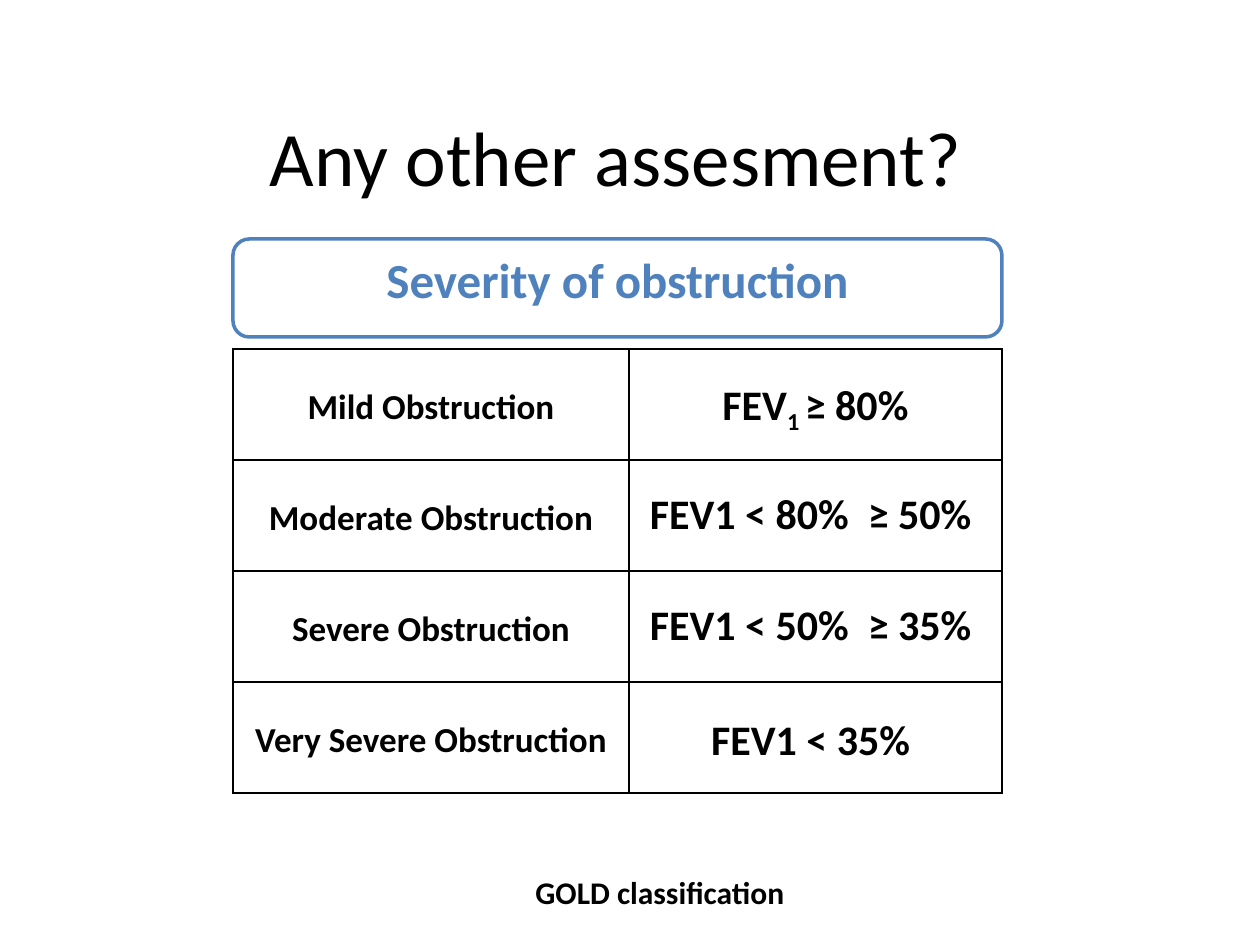
from pptx import Presentation
from pptx.dml.color import RGBColor
from pptx.enum.shapes import MSO_SHAPE as Shape
from pptx.enum.text import MSO_ANCHOR as Anchor, MSO_AUTO_SIZE as AutoSize, PP_ALIGN as Align
from pptx.oxml.ns import qn
from pptx.util import Pt
from lxml.etree import SubElement

TITLE = "Any other assesment?"
HEADING = "Severity of obstruction"
SOURCE = "GOLD classification"
GRADES = [
    ("Mild Obstruction", ["FEV", "1 ", "≥ 80%"], 1.15),
    ("Moderate Obstruction", ["FEV1 < 80%  ≥ 50% "], 1.0),
    ("Severe Obstruction", ["FEV1 < 50%  ≥ 35% "], 1.0),
    ("Very Severe Obstruction", ["FEV1 < 35% "], 1.15),
]
SUBSCRIPT = "1 "
FONT, BLACK, WHITE, BLUE = "Calibri", "000000", "FFFFFF", "4F81BD"
LEFT, GRID_TOP, ROW_HEIGHT = 233, 349, 111
COLUMNS = [396, 373]
WIDTH = sum(COLUMNS)


def px(n):
    return round(n * 914400 / 126)


def box(*lengths):
    return [px(n) for n in lengths]


def rgb(hex_colour):
    return RGBColor.from_string(hex_colour)


def write(frame, runs, size, colour=BLACK, bold=True, spacing=1.0):
    paragraph = frame.paragraphs[0]
    paragraph.alignment = Align.CENTER
    paragraph.line_spacing = spacing
    for text in runs:
        run = paragraph.add_run()
        run.text = text
        font = run.font
        font.name, font.size, font.bold = FONT, Pt(size), bold
        font.color.rgb = rgb(colour)
        if text == SUBSCRIPT:
            font._element.set("baseline", "-25000")


def add_borders(cell):
    properties = cell._tc.get_or_add_tcPr()
    for position, side in enumerate(("a:lnL", "a:lnR", "a:lnT", "a:lnB")):
        border = properties.makeelement(qn(side), {"w": str(Pt(1))})
        fill = SubElement(border, qn("a:solidFill"))
        SubElement(fill, qn("a:srgbClr"), val=BLACK)
        properties.insert(position, border)


def add_grades(slide):
    table = slide.shapes.add_table(
        len(GRADES), len(COLUMNS),
        *box(LEFT, GRID_TOP, WIDTH, ROW_HEIGHT * len(GRADES))).table
    table.first_row = table.horz_banding = False
    for column, width in zip(table.columns, COLUMNS):
        column.width = px(width)
    for row, (grade, limits, spacing) in enumerate(GRADES):
        table.rows[row].height = px(ROW_HEIGHT)
        contents = [([grade], 20, 1.15), (limits, 24, spacing)]
        for col, (runs, size, line_spacing) in enumerate(contents):
            cell = table.cell(row, col)
            cell.fill.background()
            cell.vertical_anchor = Anchor.MIDDLE
            cell.margin_left = cell.margin_right = px(9)
            cell.margin_top = cell.margin_bottom = 0
            write(cell.text_frame, runs, size, spacing=line_spacing)
            add_borders(cell)


def main():
    deck = Presentation()
    deck.slide_width, deck.slide_height = box(1260, 945)
    slide = deck.slides.add_slide(deck.slide_layouts[5])

    title = slide.shapes.title
    title.left, title.top, title.width, title.height = box(115, 83, 1002, 145)
    title.text_frame.vertical_anchor = Anchor.MIDDLE
    write(title.text_frame, [TITLE], 44, bold=False)

    add_grades(slide)

    source = slide.shapes.add_textbox(*box(501, 867, 318, 50)).text_frame
    source.word_wrap = True
    source.auto_size = AutoSize.SHAPE_TO_FIT_TEXT
    write(source, [SOURCE], 18)

    heading = slide.shapes.add_shape(Shape.ROUNDED_RECTANGLE, *box(LEFT, 239, WIDTH, 98))
    heading.shadow.inherit = False
    heading.fill.solid()
    heading.fill.fore_color.rgb = rgb(WHITE)
    heading.line.color.rgb = rgb(BLUE)
    heading.line.width = Pt(2)
    heading.text_frame.word_wrap = False
    heading.text_frame.vertical_anchor = Anchor.TOP
    write(heading.text_frame, [HEADING], 28, BLUE)

    deck.save("out.pptx")


if __name__ == "__main__":
    main()
